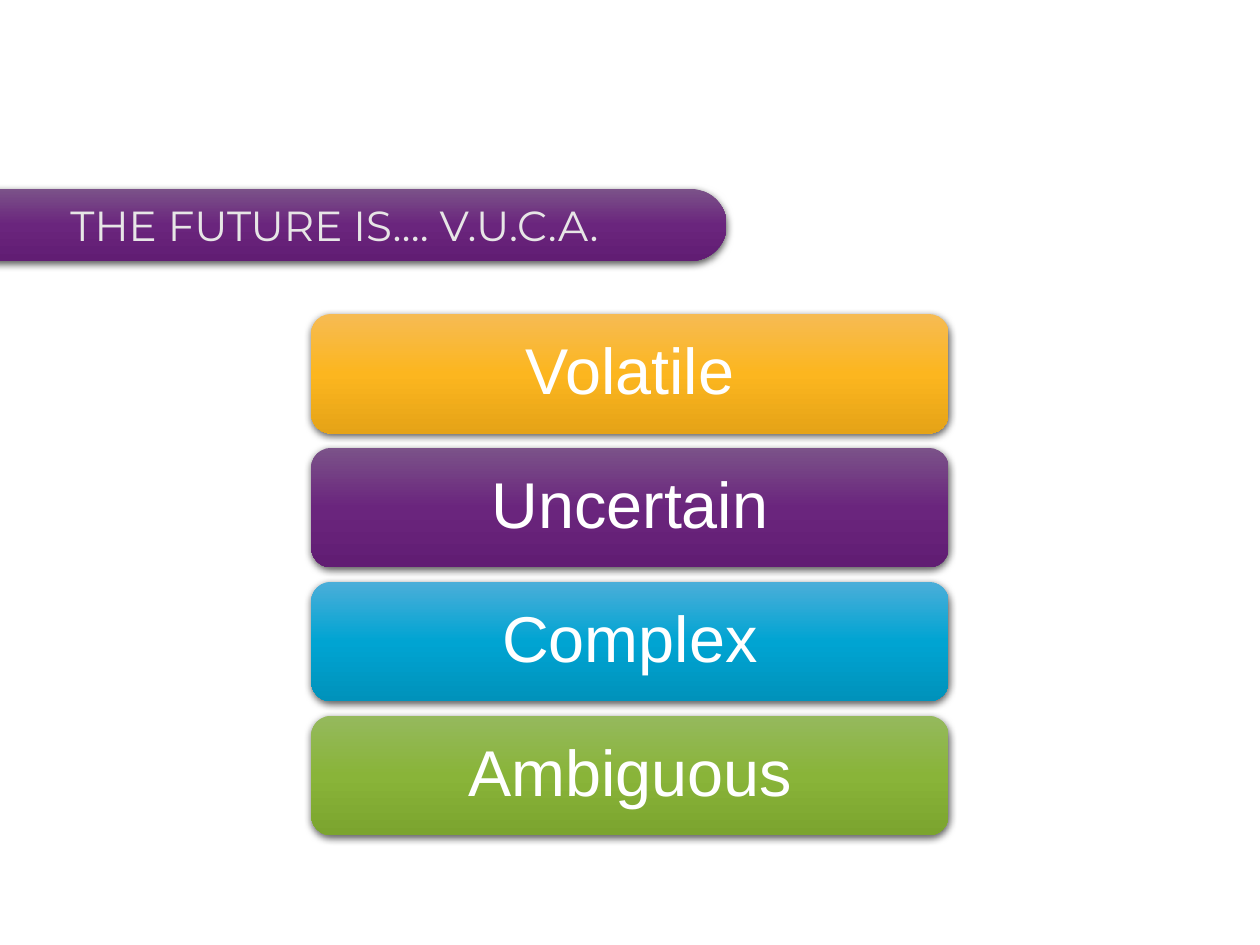
from copy import deepcopy

from lxml import etree
from pptx import Presentation, util as u
from pptx.dml.color import RGBColor
from pptx.enum import shapes, text
from pptx.oxml.ns import qn

PURPLE = ("7B5289", "6A257D", "611D73")
TITLE = "THE FUTURE IS…. V.U.C.A."
TRAITS = [
    ("Volatile", ("F6BB53", "FCB61F", "E5A317")),
    ("Uncertain", PURPLE),
    ("Complex", ("4BAED9", "00A4D2", "0092BB")),
    ("Ambiguous", ("95B95D", "89B439", "7BA42E")),
]

SLIDE_WIDTH, SLIDE_HEIGHT = 25.4, 19.05
BAR_WIDTH, BAR_HEIGHT, BAR_PITCH = 12.85, 2.41, 2.7
FIRST_BAR_TOP = 6.33


def color(value):
    return RGBColor.from_string(value)


def add_soft_shadow(shape):
    shape.shadow.inherit = False
    effects = shape._element.spPr.find(qn("a:effectLst"))
    shadow = etree.SubElement(
        effects, qn("a:outerShdw"), blurRad=str(u.Pt(4.5)), dist=str(u.Pt(1.5)),
        dir="5400000", algn="ctr", rotWithShape="0")
    black = etree.SubElement(shadow, qn("a:srgbClr"), val="000000")
    etree.SubElement(black, qn("a:alpha"), val="63000")


def add_bar(slide, left, top, width, height, shades, corner=None):
    """Rounded bar shaded from top through middle to bottom."""
    bar = slide.shapes.add_shape(
        shapes.MSO_SHAPE.ROUNDED_RECTANGLE,
        u.Cm(left), u.Cm(top), u.Cm(width), u.Cm(height))
    if corner is not None:
        bar.adjustments[0] = corner
    bar.fill.gradient()
    bar.fill.gradient_angle = 270
    stops = bar._element.spPr.find(".//" + qn("a:gsLst"))
    stops.append(deepcopy(stops[0]))
    for stop, position, shade in zip(bar.fill.gradient_stops, (0, 0.5, 1), shades):
        stop.position = position
        stop.color.rgb = color(shade)
    bar.line.fill.background()
    add_soft_shadow(bar)
    return bar


def write(bar, words, *, size, font, ink, align, margins):
    frame = bar.text_frame
    frame.word_wrap = True
    frame.vertical_anchor = text.MSO_ANCHOR.MIDDLE
    (frame.margin_left, frame.margin_top,
     frame.margin_right, frame.margin_bottom) = map(u.Cm, margins)
    line = frame.paragraphs[0]
    line.alignment = align
    line.line_spacing = 0.9
    run = line.add_run()
    run.text = words
    run.font.size = u.Pt(size)
    run.font.name = font
    run.font.color.rgb = color(ink)


def main():
    deck = Presentation()
    deck.slide_width, deck.slide_height = u.Cm(SLIDE_WIDTH), u.Cm(SLIDE_HEIGHT)
    slide = deck.slides.add_slide(deck.slide_layouts[6])

    for row, (trait, shades) in enumerate(TRAITS):
        bar = add_bar(slide, (SLIDE_WIDTH - BAR_WIDTH) / 2,
                      FIRST_BAR_TOP + row * BAR_PITCH, BAR_WIDTH, BAR_HEIGHT, shades)
        write(bar, trait, size=37, font="Arial", ink="FFFFFF",
              align=text.PP_ALIGN.CENTER, margins=(0.38, 0.38, 0.38, 0.38))

    banner = add_bar(slide, -0.79, 3.81, 15.44, 1.45, PURPLE, corner=0.5)
    write(banner, TITLE, size=24, font="Montserrat", ink="E7E6E6",
          align=text.PP_ALIGN.LEFT, margins=(2, 0.1, 0.6, 0))

    deck.save("out.pptx")


if __name__ == "__main__":
    main()
